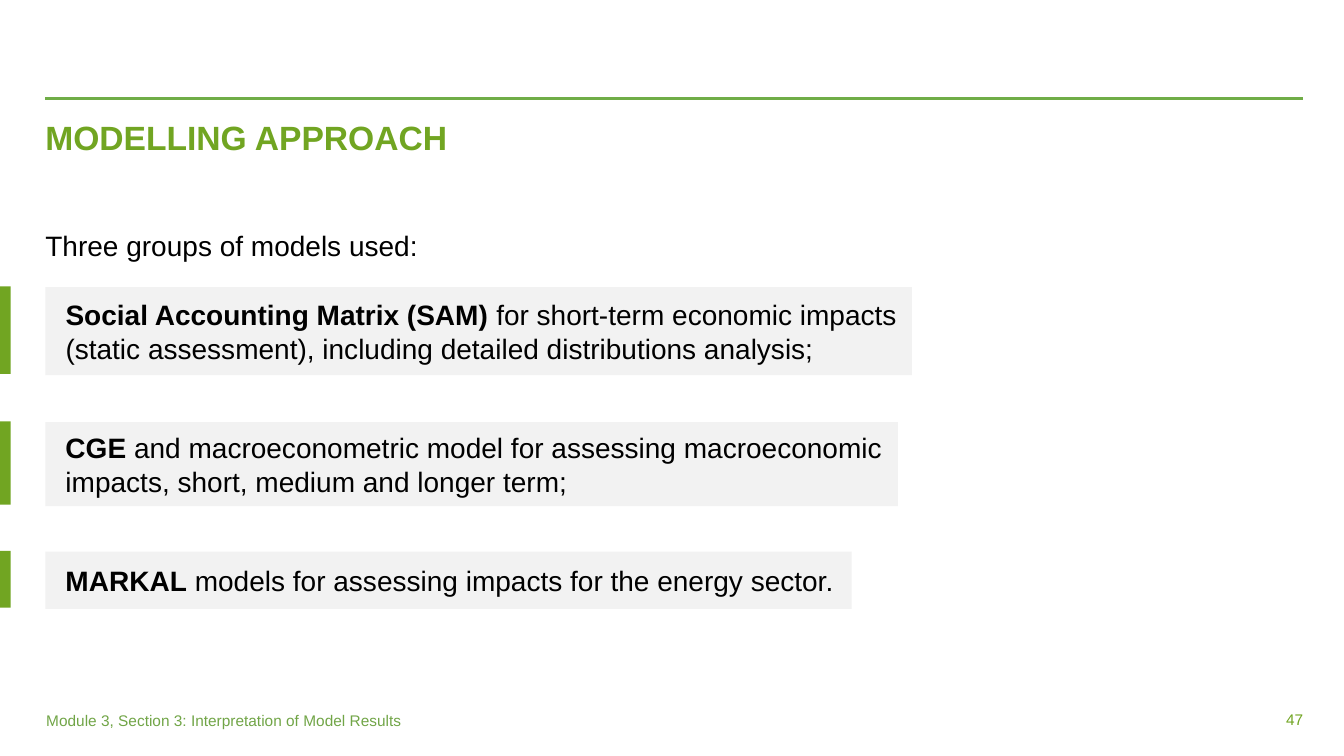
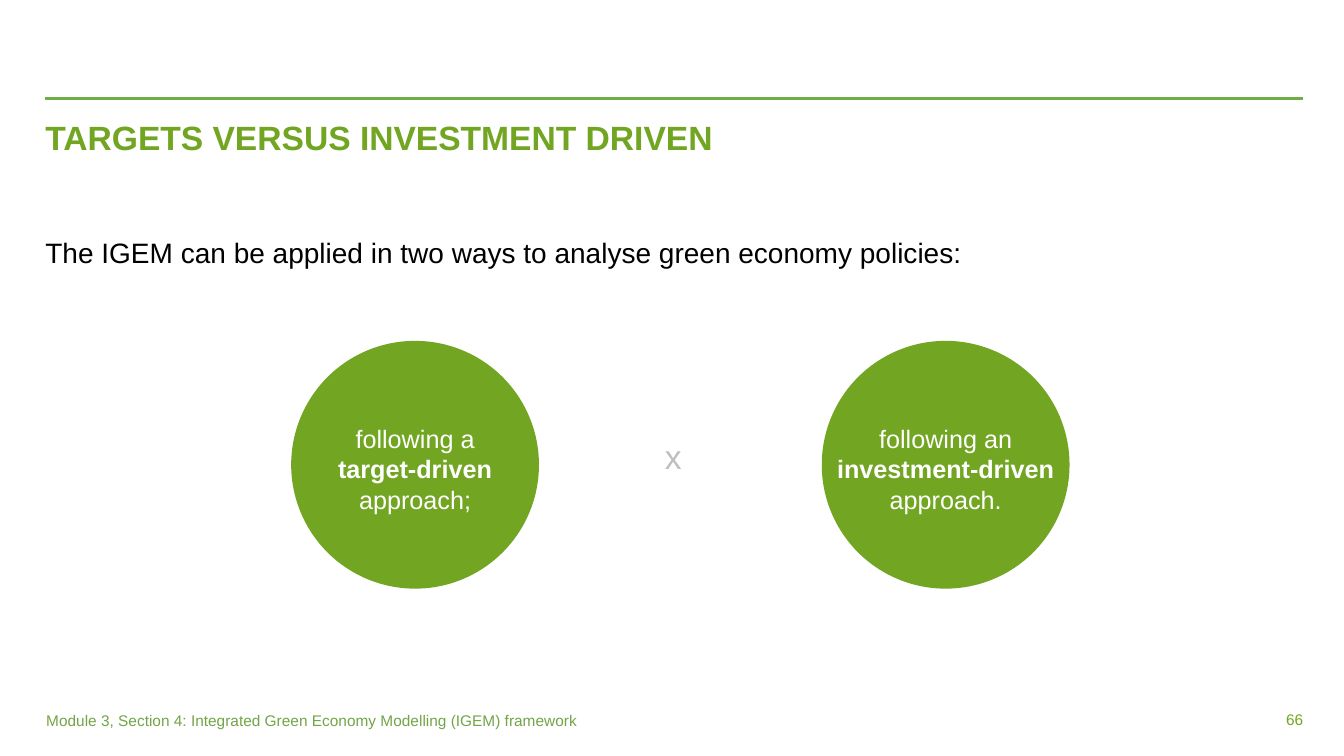
from lxml.etree import SubElement
from pptx import Presentation
from pptx.dml.color import RGBColor
from pptx.enum.shapes import MSO_CONNECTOR, MSO_SHAPE
from pptx.enum.text import MSO_ANCHOR, PP_ALIGN
from pptx.oxml.ns import qn
from pptx.util import Pt

COLORS = {
    "green": "71A522", "rule": "70AD47", "footer": "71A547",
    "panel": "F2F2F2", "text": "000000", "white": "FFFFFF", "versus": "BFBFBF",
}
FONT = "Arial"
LEFT, RIGHT = 32.4, 931

# Content: lines of (text, bold) runs
MODELS = {
    "title": "MODELLING APPROACH",
    "intro": "Three groups of models used:",
    "intro_top": 157,
    "footer": "Module 3, Section 3: Interpretation of Model Results",
    "number": "47",
}
# Panels: top, width, height, runs
MODEL_PANELS = [
    (205, 619, 63, [
        ("Social Accounting Matrix (SAM) ", True),
        ("for short-term economic impacts (static assessment), "
         "including detailed distributions analysis;", False)]),
    (301.5, 609, 60, [
        ("CGE", True),
        (" and macroeconometric model for assessing macroeconomic "
         "impacts, short, medium and longer term;", False)]),
    (394, 576, 41, [
        ("MARKAL", True),
        (" models for assessing impacts for the energy sector.", False)]),
]

DRIVERS = {
    "title": "TARGETS VERSUS INVESTMENT DRIVEN",
    "intro": "The IGEM can be applied in two ways to analyse green economy policies:",
    "intro_top": 162,
    "footer": "Module 3, Section 4: Integrated Green Economy Modelling (IGEM) framework",
    "number": "66",
}
# Circles: left, lines
DRIVER_CIRCLES = [
    (208, [("following a", False), ("target-driven", True), ("approach;", False)]),
    (587, [("following an", False), ("investment-driven", True), ("approach.", False)]),
]
CIRCLE_TOP, CIRCLE_SIZE = 243.5, 177


def rgb(name):
    return RGBColor.from_string(COLORS[name])


def style(run, size, color, bold=False):
    run.font.name, run.font.size, run.font.bold = FONT, Pt(size), bold
    run.font.color.rgb = rgb(color)


def set_insets(frame, left=0, top=3.6, right=0, bottom=3.6):
    frame.margin_left, frame.margin_top = Pt(left), Pt(top)
    frame.margin_right, frame.margin_bottom = Pt(right), Pt(bottom)


def add_label(slide, text, left, top, width, height, size, color,
              bold=False, spacing=1.0, align=PP_ALIGN.LEFT):
    box = slide.shapes.add_textbox(Pt(left), Pt(top), Pt(width), Pt(height))
    frame = box.text_frame
    frame.word_wrap = True
    set_insets(frame)
    frame.text = text
    paragraph = frame.paragraphs[0]
    paragraph.alignment, paragraph.line_spacing = align, spacing
    style(paragraph.runs[0], size, color, bold)


def add_block(slide, kind, left, top, width, height, color):
    shape = slide.shapes.add_shape(kind, Pt(left), Pt(top), Pt(width), Pt(height))
    shape.shadow.inherit = False
    shape.fill.solid()
    shape.fill.fore_color.rgb = rgb(color)
    shape.line.fill.background()
    return shape


def add_base_slide(presentation, content):
    """Slide with rule, title, intro, footer and number."""
    slide = presentation.slides.add_slide(presentation.slide_layouts[6])
    rule = slide.shapes.add_connector(
        MSO_CONNECTOR.STRAIGHT, Pt(LEFT), Pt(70.5), Pt(RIGHT), Pt(70.5))
    rule.line.color.rgb, rule.line.width = rgb("rule"), Pt(2)
    SubElement(rule._element.spPr, qn("a:effectLst"))

    width = RIGHT - LEFT
    add_label(slide, content["title"], LEFT, 83.5, width, 48, 24, "green",
              bold=True, spacing=0.9)
    add_label(slide, content["intro"], LEFT, content["intro_top"], width, 32,
              20, "text", spacing=1.1)
    add_label(slide, content["footer"], 33, 504.5, 420, 24, 11, "footer")
    add_label(slide, content["number"], RIGHT - 80, 504, 80, 24, 11, "green",
              align=PP_ALIGN.RIGHT)
    return slide


def build_models(presentation):
    slide = add_base_slide(presentation, MODELS)
    for top, width, height, runs in MODEL_PANELS:
        add_block(slide, MSO_SHAPE.RECTANGLE, 0, top - 0.5, 7.7, height - 0.5, "green")
        panel = add_block(slide, MSO_SHAPE.RECTANGLE, LEFT, top, width, height, "panel")
        frame = panel.text_frame
        frame.word_wrap, frame.vertical_anchor = True, MSO_ANCHOR.MIDDLE
        set_insets(frame, left=14.4, right=3.6)
        paragraph = frame.paragraphs[0]
        paragraph.alignment, paragraph.line_spacing = PP_ALIGN.LEFT, Pt(24)
        for text, bold in runs:
            run = paragraph.add_run()
            run.text = text
            style(run, 20, "text", bold)


def build_drivers(presentation):
    slide = add_base_slide(presentation, DRIVERS)
    for left, lines in DRIVER_CIRCLES:
        circle = add_block(slide, MSO_SHAPE.OVAL, left, CIRCLE_TOP,
                           CIRCLE_SIZE, CIRCLE_SIZE, "green")
        frame = circle.text_frame
        frame.word_wrap, frame.vertical_anchor = False, MSO_ANCHOR.MIDDLE
        set_insets(frame, top=6, bottom=0)
        paragraph = frame.paragraphs[0]
        paragraph.alignment, paragraph.line_spacing = PP_ALIGN.CENTER, Pt(21.5)
        for index, (text, bold) in enumerate(lines):
            if index:
                paragraph.add_line_break()
            run = paragraph.add_run()
            run.text = text
            style(run, 18, "white", bold)
    add_label(slide, "x", 475, 305, 18, 36, 24, "versus", spacing=1.1)


def main():
    presentation = Presentation()
    presentation.slide_width, presentation.slide_height = Pt(960), Pt(540)
    build_models(presentation)
    build_drivers(presentation)
    presentation.save("out.pptx")


if __name__ == "__main__":
    main()
